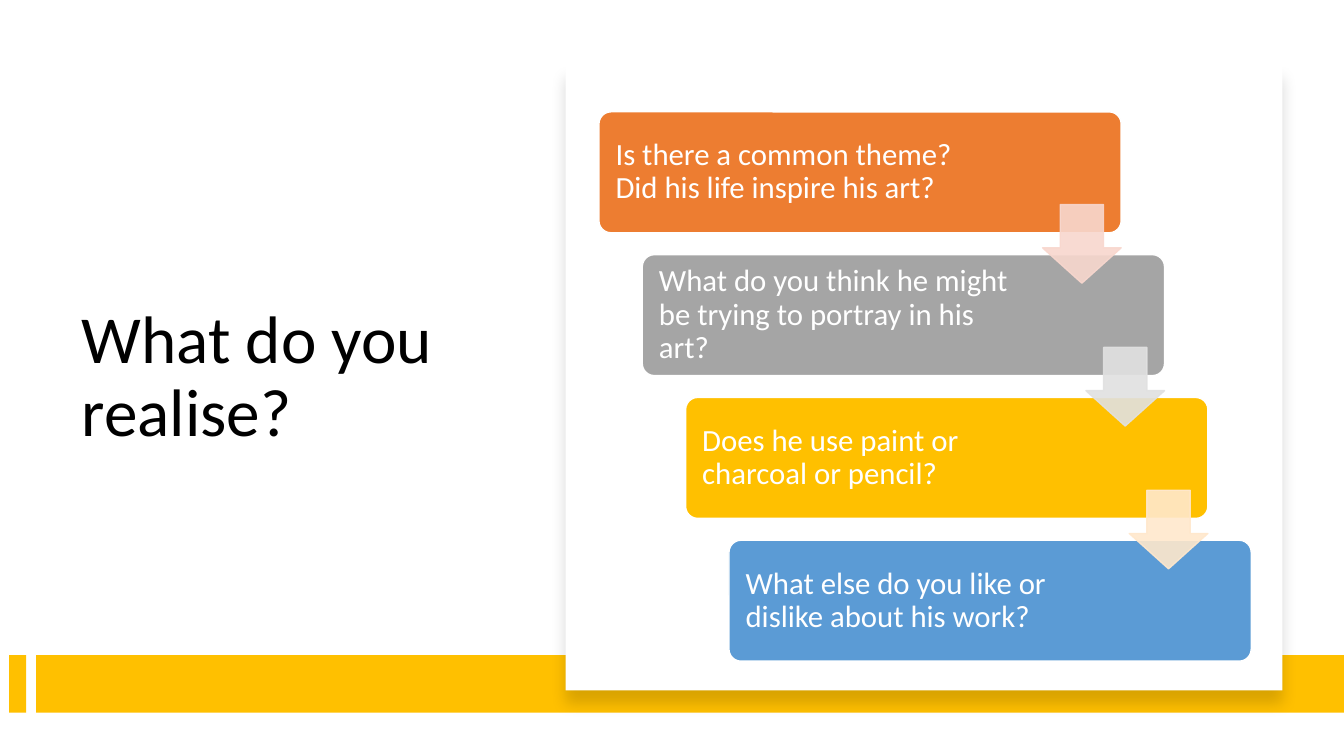
from lxml.etree import SubElement
from pptx import Presentation
from pptx.dml.color import RGBColor
from pptx.enum.shapes import MSO_SHAPE as Shape
from pptx.enum.text import MSO_ANCHOR as Anchor, PP_ALIGN as Align
from pptx.oxml.ns import qn
from pptx.util import Inches, Pt

BLACK = RGBColor(0x00, 0x00, 0x00)
WHITE = RGBColor(0xFF, 0xFF, 0xFF)
GOLD = RGBColor(0xFF, 0xC0, 0x00)
ORANGE = RGBColor(0xED, 0x7D, 0x31)
GRAY = RGBColor(0xA5, 0xA5, 0xA5)
BLUE = RGBColor(0x5B, 0x9B, 0xD5)
PALE_ORANGE = RGBColor(0xF8, 0xD7, 0xCE)
PALE_GRAY = RGBColor(0xE1, 0xE1, 0xE1)
PALE_GOLD = RGBColor(0xFF, 0xE8, 0xCC)

QUESTIONS = [
    ("Is there a common theme? Did his life inspire his art?", ORANGE),
    ("What do you think he might be trying to portray in his art?", GRAY),
    ("Does he use paint or charcoal or pencil?", GOLD),
    ("What else do you like or dislike about his work?", BLUE),
]
ARROW_COLORS = [PALE_ORANGE, PALE_GRAY, PALE_GOLD]
STEP_X = 0.43
STEP_Y = (5.36 - 1.11) / 3


def write_text(shape, text, size, color, font="Calibri", margins=(0.1, 0.05, 0.1, 0.05)):
    frame = shape.text_frame
    frame.word_wrap = True
    frame.vertical_anchor = Anchor.MIDDLE
    frame.margin_left, frame.margin_top, frame.margin_right, frame.margin_bottom = map(Inches, margins)
    paragraph = frame.paragraphs[0]
    paragraph.alignment = Align.LEFT
    paragraph.line_spacing = 0.9
    run = paragraph.add_run()
    run.text = text
    run.font.name = font
    run.font.size = Pt(size)
    run.font.color.rgb = color


class QuestionSlide:
    """Draws the elements of one slide in a shared style."""

    def __init__(self, presentation):
        self.slide = presentation.slides.add_slide(presentation.slide_layouts[5])

    def title(self, text, left, top, width, height):
        title = self.slide.shapes.title
        title.left, title.top = Inches(left), Inches(top)
        title.width, title.height = Inches(width), Inches(height)
        write_text(title, text, 48, BLACK)

    def block(self, kind, left, top, width, height, fill, line=None):
        shape = self.slide.shapes.add_shape(
            kind, Inches(left), Inches(top), Inches(width), Inches(height))
        shape.shadow.inherit = False
        shape.fill.solid()
        shape.fill.fore_color.rgb = fill
        if line is None:
            shape.line.fill.background()
        else:
            shape.line.color.rgb = line
            shape.line.width = Pt(1)
        return shape

    def panel(self, left, top, width, height):
        panel = self.block(Shape.RECTANGLE, left, top, width, height, WHITE)
        effects = panel._element.spPr.find(qn("a:effectLst"))
        shadow = SubElement(effects, qn("a:outerShdw"), blurRad=str(Pt(11)),
                            dist=str(Pt(10)), dir="5400000", algn="t", rotWithShape="0")
        color = SubElement(shadow, qn("a:srgbClr"), val=str(BLACK))
        SubElement(color, qn("a:alpha"), val="15000")

    def card(self, text, left, top, fill):
        card = self.block(Shape.ROUNDED_RECTANGLE, left, top, 5.18, 1.2, fill, WHITE)
        card.adjustments[0] = 0.1
        write_text(card, text, 22, WHITE, margins=(0.13, 0.13, 1.33, 0.13))

    def arrow(self, left, top, color):
        arrow = self.block(Shape.DOWN_ARROW, left, top, 0.78, 0.78, color, color)
        arrow.adjustments[0] = 0.45
        arrow.adjustments[0], arrow.adjustments[1] = 0.55, 0.45
        for tint in arrow._element.spPr.iter(qn("a:srgbClr")):
            SubElement(tint, qn("a:alpha"), val="90000")


def main():
    presentation = Presentation()
    presentation.slide_width, presentation.slide_height = Inches(13.33), Inches(7.5)
    page = QuestionSlide(presentation)
    page.title("What do you realise?", 0.71, 1.2, 4.15, 5.1)
    for left, width in ((0.09, 0.17), (0.36, 12.97)):
        page.block(Shape.RECTANGLE, left, 6.5, width, 0.57, GOLD)
    page.panel(5.61, 0.64, 7.11, 6.21)
    for index, (question, color) in enumerate(QUESTIONS):
        page.card(question, 5.94 + index * STEP_X, 1.11 + index * STEP_Y, color)
    for index, color in enumerate(ARROW_COLORS):
        page.arrow(10.34 + index * STEP_X, 2.03 + index * STEP_Y, color)
    presentation.save("out.pptx")


if __name__ == "__main__":
    main()
